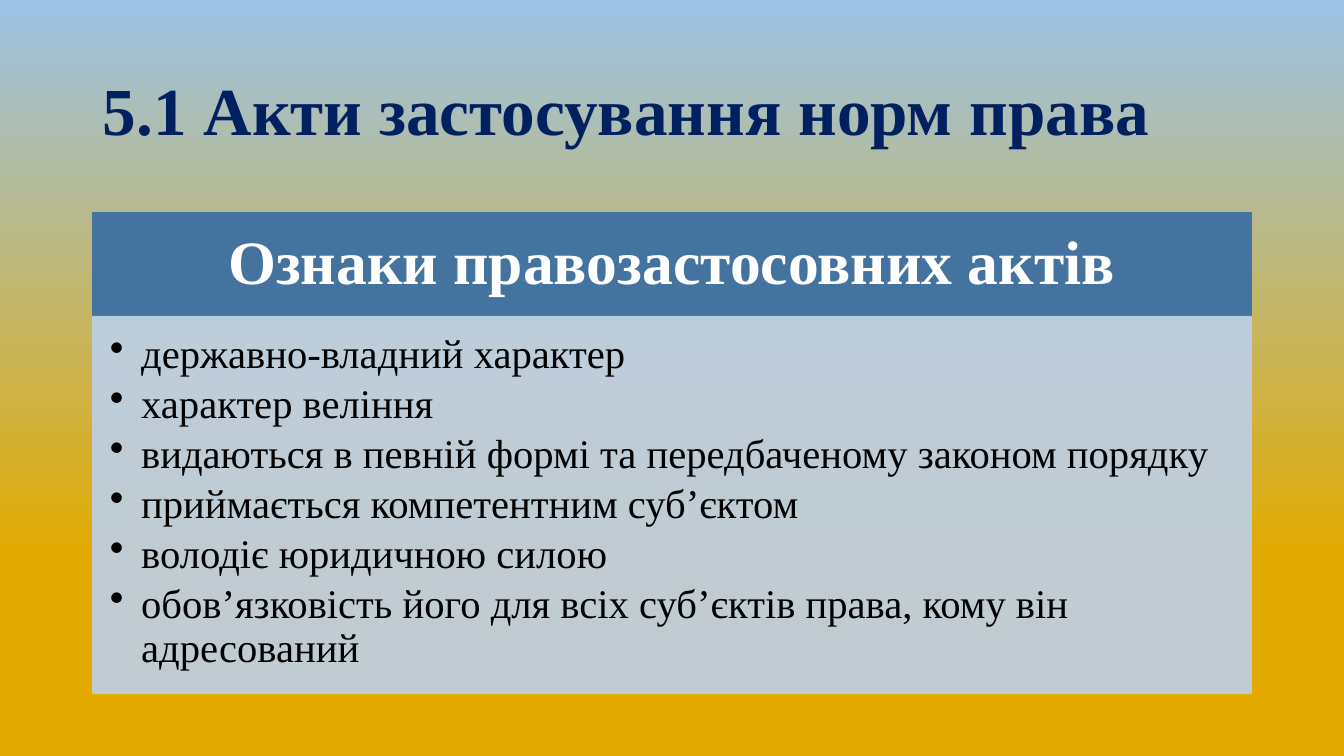
from lxml.etree import SubElement
from pptx import Presentation
from pptx.dml.color import RGBColor
from pptx.enum.shapes import MSO_SHAPE as Shape
from pptx.enum.text import MSO_ANCHOR as Anchor, PP_ALIGN as Align
from pptx.oxml.ns import qn
from pptx.util import Inches, Pt

WIDTH, HEIGHT = 13.33, 7.5
FONT = "Times New Roman"
COLORS = {
    "gold": "E3AB00", "sky": "9DC3E6", "navy": "002060", "header": "43739E",
    "panel": "BDD0E9", "white": "FFFFFF", "black": "000000",
}
FEATURES = [
    "державно-владний характер",
    "характер веління",
    "видаються в певній формі та передбаченому законом порядку",
    "приймається компетентним суб’єктом",
    "володіє юридичною силою",
    "обов’язковість його для всіх суб’єктів права, кому він адресований",
]


def rgb(name):
    return RGBColor.from_string(COLORS[name])


def write(frame, lines, size, color, bold=False, align=Align.LEFT, anchor=Anchor.MIDDLE,
          insets=(0.1, 0.05, 0.1, 0.05), space_after=0, hanging=0):
    """Fill a text frame, one paragraph a line; a hanging indent brings bullets."""
    frame.word_wrap = True
    frame.vertical_anchor = anchor
    (frame.margin_left, frame.margin_top,
     frame.margin_right, frame.margin_bottom) = map(Inches, insets)
    for index, line in enumerate(lines):
        paragraph = frame.add_paragraph() if index else frame.paragraphs[0]
        paragraph.alignment = align
        paragraph.line_spacing = 0.9
        paragraph.space_before = Pt(0)
        paragraph.space_after = Pt(space_after)
        run = paragraph.add_run()
        run.text = line
        run.font.name, run.font.size, run.font.bold = FONT, Pt(size), bold
        run.font.color.rgb = rgb(color)
        if hanging:
            properties = paragraph._p.get_or_add_pPr()
            properties.set("marL", str(Inches(hanging)))
            properties.set("indent", str(-Inches(hanging)))
            SubElement(properties, qn("a:buChar"), char="•")


def add_panel(slide, box, color, opacity=100):
    """Add a flat rectangle and return its text frame."""
    panel = slide.shapes.add_shape(Shape.RECTANGLE, *map(Inches, box))
    panel.shadow.inherit = False
    panel.fill.solid()
    panel.fill.fore_color.rgb = rgb(color)
    panel.line.color.rgb = rgb(color)
    panel.line.width = Pt(1)
    if opacity < 100:
        for tint in panel._element.spPr.iter(qn("a:srgbClr")):
            SubElement(tint, qn("a:alpha"), val=str(opacity * 1000))
    return panel.text_frame


def paint_background(slide):
    fill = slide.background.fill
    fill.gradient()
    fill.gradient_angle = 90
    for stop, color, position in zip(fill.gradient_stops, ("gold", "sky"), (0.26, 1)):
        stop.color.rgb = rgb(color)
        stop.position = position


def add_title(slide, box, title):
    frame = slide.shapes.add_textbox(*map(Inches, box)).text_frame
    write(frame, [title], 48, "navy", bold=True)


def add_feature_list(slide, box, heading, features):
    left, top, width, height = box
    header_height = height * 0.216
    # Header band
    header = add_panel(slide, (left, top, width, header_height), "header")
    write(header, [heading], 44, "white", bold=True, align=Align.CENTER,
          insets=(0.34, 0.2, 0.34, 0.2))
    # Translucent body with bullets
    body = add_panel(slide, (left, top + header_height, width, height - header_height),
                     "panel", opacity=90)
    write(body, features, 29, "black", anchor=Anchor.TOP,
          insets=(0.17, 0.17, 0.23, 0.25), space_after=4.35, hanging=0.31)


def main():
    deck = Presentation()
    deck.slide_width, deck.slide_height = Inches(WIDTH), Inches(HEIGHT)
    slide = deck.slides.add_slide(deck.slide_layouts[6])
    margin = 0.92
    content_width = WIDTH - 2 * margin
    paint_background(slide)
    add_title(slide, (margin, 0.4, content_width, 1.45), "5.1 Акти застосування норм права")
    add_feature_list(slide, (margin, 2.11, content_width, 4.77),
                     "Ознаки правозастосовних актів", FEATURES)
    deck.save("out.pptx")


if __name__ == "__main__":
    main()
